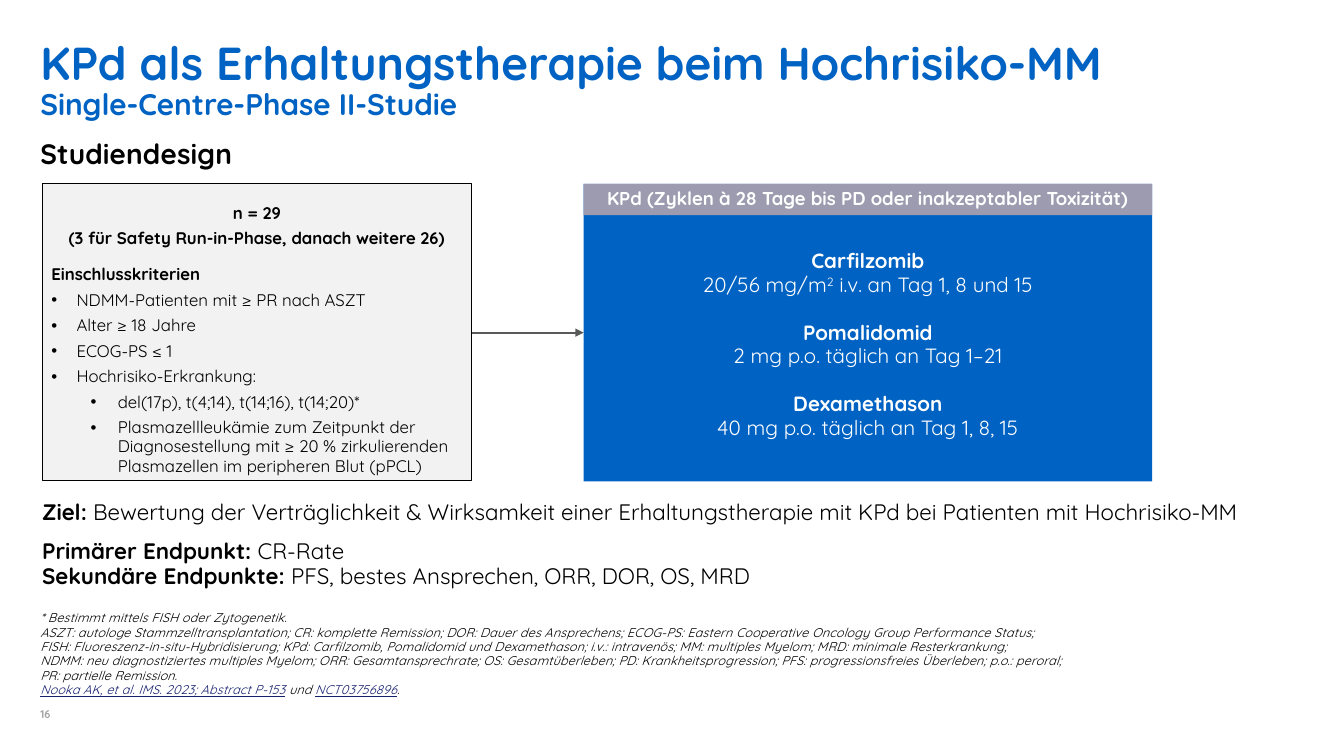
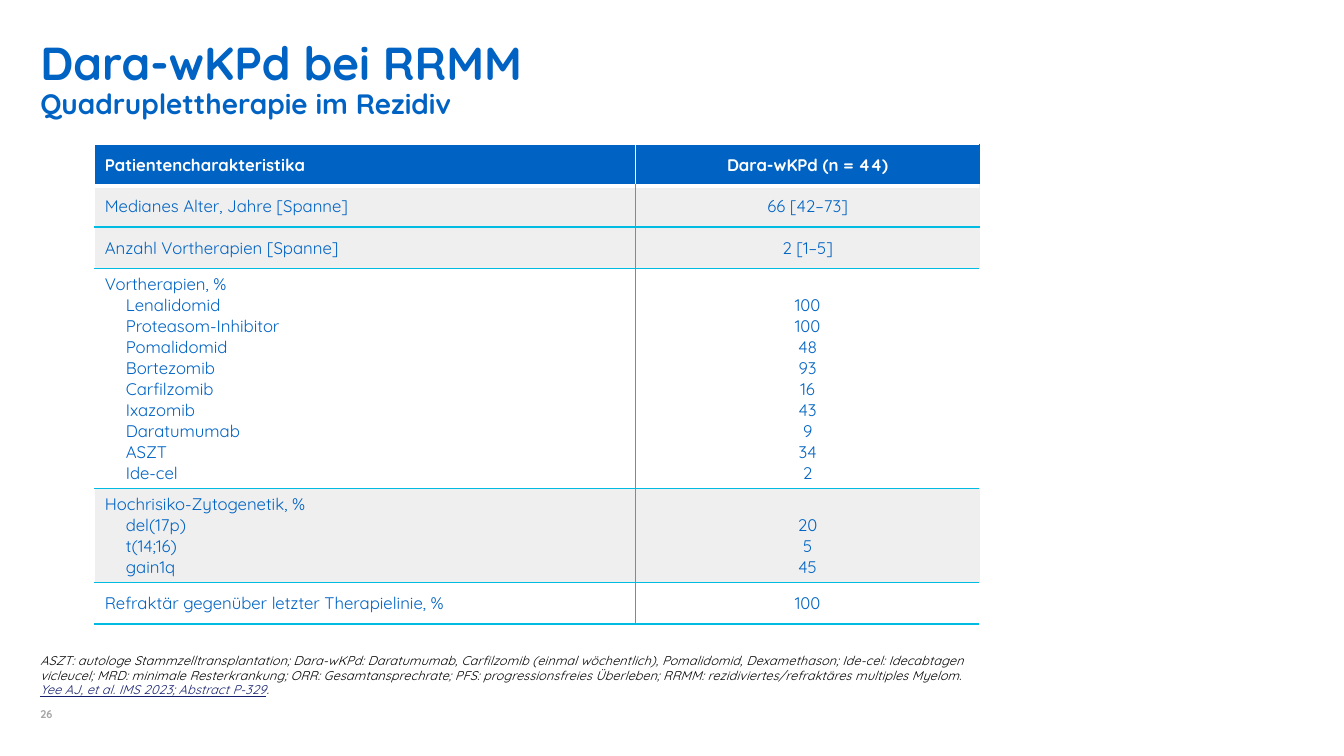
from lxml.etree import SubElement
from pptx import Presentation
from pptx.dml.color import RGBColor
from pptx.enum.shapes import MSO_CONNECTOR as Link, MSO_SHAPE as Preset
from pptx.enum.text import MSO_ANCHOR as Anchor, PP_ALIGN as Align
from pptx.oxml.ns import qn
from pptx.util import Pt

FONT = "Quicksand"
BLUE, CYAN, WHITE, BLACK = "0063C3", "00BCE3", "FFFFFF", "000000"
PALE, PANEL, MAUVE = "EFEFEF", "F2F2F2", "9D9BAF"
GREY, PAGE_GREY, CITATION = "595959", "A6A6A6", "151F6D"
LEFT, FULL_WIDTH = 28.8, 902.2
TIGHT, TITLE_TIGHT = 0.95, 0.9


def paint(color_format, hex_value):
    color_format.rgb = RGBColor.from_string(hex_value)


def add_run(paragraph, text, size, color, bold=False, italic=False,
            underline=False, spacing=0, baseline=0):
    for index, piece in enumerate(text.split("\n")):
        if index:
            paragraph.add_line_break()
        run = paragraph.add_run()
        run.text = piece
        font = run.font
        font.name, font.size = FONT, Pt(size)
        font.bold, font.italic, font.underline = bold, italic, underline
        paint(font.color, color)
        for key, value in (("spc", spacing), ("baseline", baseline)):
            if value:
                run.font._element.set(key, str(value))


def set_bullet(paragraph, margin, hanging):
    props = paragraph._p.get_or_add_pPr()
    props.set("marL", str(Pt(margin)))
    props.set("indent", str(-Pt(hanging)))
    SubElement(props, qn("a:buFont")).set("typeface", "Arial")
    SubElement(props, qn("a:buChar")).set("char", "•")


def write(frame, paragraphs, align=Align.LEFT, line=TIGHT, **base):
    for index, entry in enumerate(paragraphs):
        runs, before, bullet, own_align = (entry + (0, None, None))[:4]
        paragraph = frame.paragraphs[0] if index == 0 else frame.add_paragraph()
        paragraph.alignment = own_align or align
        paragraph.line_spacing = line
        paragraph.space_before = Pt(before if index else 0)
        if bullet:
            set_bullet(paragraph, *bullet)
        for text, style in runs:
            add_run(paragraph, text, **{**base, **style})


def set_frame(frame, anchor, insets):
    frame.word_wrap = True
    frame.vertical_anchor = anchor
    (frame.margin_left, frame.margin_top,
     frame.margin_right, frame.margin_bottom) = map(Pt, insets)
    return frame


def text_frame(slide, box, anchor=Anchor.TOP, insets=(0, 0, 0, 0)):
    return set_frame(slide.shapes.add_textbox(*map(Pt, box)).text_frame,
                     anchor, insets)


def panel(slide, box, fill, insets, outline=None):
    shape = slide.shapes.add_shape(Preset.RECTANGLE, *map(Pt, box))
    shape.shadow.inherit = False
    shape.fill.solid()
    paint(shape.fill.fore_color, fill)
    if outline:
        paint(shape.line.color, outline)
        shape.line.width = Pt(0.75)
    else:
        shape.line.fill.background()
    return set_frame(shape.text_frame, Anchor.MIDDLE, insets)


def plain(text, **style):
    return [(text, style)]


def add_frame_slide(deck, title, subtitle, subtitle_size, page, notes, notes_width):
    slide = deck.slides.add_slide(deck.slide_layouts[6])
    heading = [(title + "\n", {"size": 33}), (subtitle, {"size": subtitle_size})]
    write(text_frame(slide, (LEFT, 28.8, FULL_WIDTH, 65.5)), [(heading,)],
          line=TITLE_TIGHT, color=BLUE, bold=True)
    write(text_frame(slide, (LEFT, 459.4, notes_width, 38.9), Anchor.BOTTOM),
          [(runs,) for runs in notes],
          size=9, color=BLACK, italic=True, spacing=10)
    write(text_frame(slide, (LEFT, 498.2, 32.4, 16.6), Anchor.BOTTOM),
          [(plain(page),)], size=8, color=PAGE_GREY, bold=True)
    return slide


def citation(text):
    return (text, {"color": CITATION, "underline": True})


def add_criteria(slide, box):
    main, sub = (18, 18), (47.5, 19.5)
    regular = {"bold": False}
    criteria = [
        (plain("n = 29"), 0, None, Align.CENTER),
        (plain("(3 für Safety Run-in-Phase, danach weitere 26)"),
         4.5, None, Align.CENTER),
        (plain("Einschlusskriterien"), 12.2),
    ]
    criteria += [(plain(text, **regular), 4.5, level) for text, level in (
        ("NDMM-Patienten mit ≥ PR nach ASZT", main),
        ("Alter ≥ 18 Jahre", main),
        ("ECOG-PS ≤ 1", main),
        ("Hochrisiko-Erkrankung:", main),
        ("del(17p), t(4;14), t(14;16), t(14;20)*", sub),
        ("Plasmazellleukämie zum Zeitpunkt der Diagnosestellung mit ≥ 20 % "
         "zirkulierenden Plasmazellen im peripheren Blut (pPCL)", sub),
    )]
    write(panel(slide, box, PANEL, (6.5, 11, 6.5, 0), BLACK), criteria,
          size=12, color=BLACK, bold=True)


def add_regimen(slide, box):
    left, top, width, height = box
    doses = (
        ("Carfilzomib", [("20/56 mg/m", {}), ("2", {"baseline": 30000}),
                         (" i.v. an Tag 1, 8 und 15", {})]),
        ("Pomalidomid", plain("2 mg p.o. täglich an Tag 1–21")),
        ("Dexamethason", plain("40 mg p.o. täglich an Tag 1, 8, 15")),
    )
    lines = []
    for drug, dose in doses:
        lines += [(plain(drug, bold=True), 17.5), (dose,)]
    write(panel(slide, box, BLUE, (10.8, 22.5, 10.8, 5)), lines,
          Align.CENTER, size=14.7, color=WHITE)
    write(panel(slide, (left, top, width, 22.3), MAUVE, (5.8, 2.9, 5.8, 2.9)),
          [(plain("KPd (Zyklen à 28 Tage bis PD oder inakzeptabler Toxizität)"),)],
          Align.CENTER, size=13.3, color=WHITE, bold=True)


def add_arrow(slide, start, end, y):
    arrow = slide.shapes.add_connector(Link.STRAIGHT, *map(Pt, (start, y, end, y)))
    arrow.line.width = Pt(1.5)
    paint(arrow.line.color, GREY)
    SubElement(arrow.line._get_or_add_ln(), qn("a:tailEnd")).set("type", "triangle")
    SubElement(arrow._element.spPr, qn("a:effectLst"))


def add_endpoints(slide, box):
    endpoints = (
        ("Ziel: ", "Bewertung der Verträglichkeit & Wirksamkeit einer "
         "Erhaltungstherapie mit KPd bei Patienten mit Hochrisiko-MM", 0),
        ("Primärer Endpunkt: ", "CR-Rate", 9.5),
        ("Sekundäre Endpunkte: ", "PFS, bestes Ansprechen, ORR, DOR, OS, MRD", 0),
    )
    write(text_frame(slide, box, insets=(7.2, 3.6, 7.2, 3.6)),
          [([(label, {"bold": True}), (text, {})], before)
           for label, text, before in endpoints], size=16, color=BLACK)


def build_design_slide(deck):
    notes = [
        plain("* Bestimmt mittels FISH oder Zytogenetik."),
        plain(
            "ASZT: autologe Stammzelltransplantation; CR: komplette Remission; "
            "DOR: Dauer des Ansprechens; ECOG-PS: Eastern Cooperative Oncology "
            "Group Performance Status;\n"
            "FISH: Fluoreszenz-in-situ-Hybridisierung; KPd: Carfilzomib, "
            "Pomalidomid und Dexamethason; i.v.: intravenös; MM: multiples "
            "Myelom; MRD: minimale Resterkrankung;\n"
            "NDMM: neu diagnostiziertes multiples Myelom; ORR: "
            "Gesamtansprechrate; OS: Gesamtüberleben; PD: "
            "Krankheitsprogression; PFS: progressionsfreies Überleben; "
            "p.o.: peroral;\n"
            "PR: partielle Remission."),
        [citation("Nooka AK, et al. IMS. 2023; Abstract P-153"), (" und ", {}),
         citation("NCT03756896"), (".", {})],
    ]
    slide = add_frame_slide(deck, "KPd als Erhaltungstherapie beim Hochrisiko-MM",
                            "Single-Centre-Phase II-Studie", 21.3, "16", notes, 794)
    write(text_frame(slide, (LEFT, 99.4, FULL_WIDTH, 28)),
          [(plain("Studiendesign"),)],
          size=20, color=BLACK, bold=True, spacing=10)
    criteria_box = (30.2, 131, 306.7, 212.6)
    regimen_box = (416.9, 131.4, 406, 212.4)
    add_criteria(slide, criteria_box)
    add_regimen(slide, regimen_box)
    add_arrow(slide, criteria_box[0] + criteria_box[2], regimen_box[0], 237.6)
    add_endpoints(slide, (23, 353.5, FULL_WIDTH, 75))


def set_border(cell, side, color, width):
    line = SubElement(cell._tc.get_or_add_tcPr(), qn("a:ln" + side))
    line.set("w", str(Pt(width)))
    fill = SubElement(line, qn("a:solidFill"))
    SubElement(fill, qn("a:srgbClr")).set("val", color)


def fill_cell(cell, lines, column, header, first_body, fill):
    inner = WHITE if header else CYAN
    set_border(cell, "L", inner if column else WHITE, 1)
    set_border(cell, "R", fill if column else inner, 1)
    top_color = WHITE if header or first_body else CYAN
    set_border(cell, "T", top_color, 3 if first_body else 1)
    set_border(cell, "B", inner, 3 if header else 1)
    cell.fill.solid()
    paint(cell.fill.fore_color, fill)
    grouped_values = column and len(lines) > 1
    cell.vertical_anchor = Anchor.BOTTOM if grouped_values else Anchor.MIDDLE
    write(cell.text_frame, [(plain(text),) for text in lines],
          Align.CENTER if column else Align.LEFT, line=1,
          size=12, color=WHITE if header else BLUE, bold=header)
    if not column:
        for paragraph in cell.text_frame.paragraphs[1:]:
            paragraph._p.get_or_add_pPr().set("marL", str(Pt(15)))


def add_characteristics(slide, left, top, widths):
    prior = (("Lenalidomid", "100"), ("Proteasom-Inhibitor", "100"),
             ("Pomalidomid", "48"), ("Bortezomib", "93"), ("Carfilzomib", "16"),
             ("Ixazomib", "43"), ("Daratumumab", "9"), ("ASZT", "34"),
             ("Ide-cel", "2"))
    cytogenetics = (("del(17p)", "20"), ("t(14;16)", "5"), ("gain1q", "45"))

    def group(heading, items):
        names, values = zip(*items)
        return [heading, *names], list(values)

    rows = (
        (["Patientencharakteristika"], ["Dara-wKPd (n = 44)"], BLUE),
        (["Medianes Alter, Jahre [Spanne]"], ["66 [42–73]"], PALE),
        (["Anzahl Vortherapien [Spanne]"], ["2 [1–5]"], PALE),
        (*group("Vortherapien, %", prior), WHITE),
        (*group("Hochrisiko-Zytogenetik, %", cytogenetics), PALE),
        (["Refraktär gegenüber letzter Therapielinie, %"], ["100"], WHITE),
    )
    heights = [max(29.6, 15 * len(labels) + 7.2) for labels, _, _ in rows]
    table = slide.shapes.add_table(len(rows), len(widths), Pt(left), Pt(top),
                                   Pt(sum(widths)), Pt(sum(heights))).table
    table.first_row = table.horz_banding = False
    for column, width in zip(table.columns, widths):
        column.width = Pt(width)
    for index, (labels, values, fill) in enumerate(rows):
        table.rows[index].height = Pt(heights[index])
        for column, lines in enumerate((labels, values)):
            fill_cell(table.cell(index, column), lines, column,
                      index == 0, index == 1, fill)


def build_patients_slide(deck):
    notes = [
        plain(
            "ASZT: autologe Stammzelltransplantation; Dara-wKPd: Daratumumab, "
            "Carfilzomib (einmal wöchentlich), Pomalidomid, Dexamethason; "
            "Ide-cel: Idecabtagen vicleucel; MRD: minimale Resterkrankung; "
            "ORR: Gesamtansprechrate; PFS: progressionsfreies Überleben; "
            "RRMM: rezidiviertes/refraktäres multiples Myelom."),
        [citation("Yee AJ, et al. IMS 2023; Abstract P-329"), (".", {})],
    ]
    slide = add_frame_slide(deck, "Dara-wKPd bei RRMM",
                            "Quadruplettherapie im Rezidiv", 20, "26", notes, 694)
    add_characteristics(slide, 67.7, 103, (386.5, 245.5))


def main():
    deck = Presentation()
    deck.slide_width, deck.slide_height = Pt(960), Pt(540)
    build_design_slide(deck)
    build_patients_slide(deck)
    deck.save("out.pptx")


if __name__ == "__main__":
    main()
